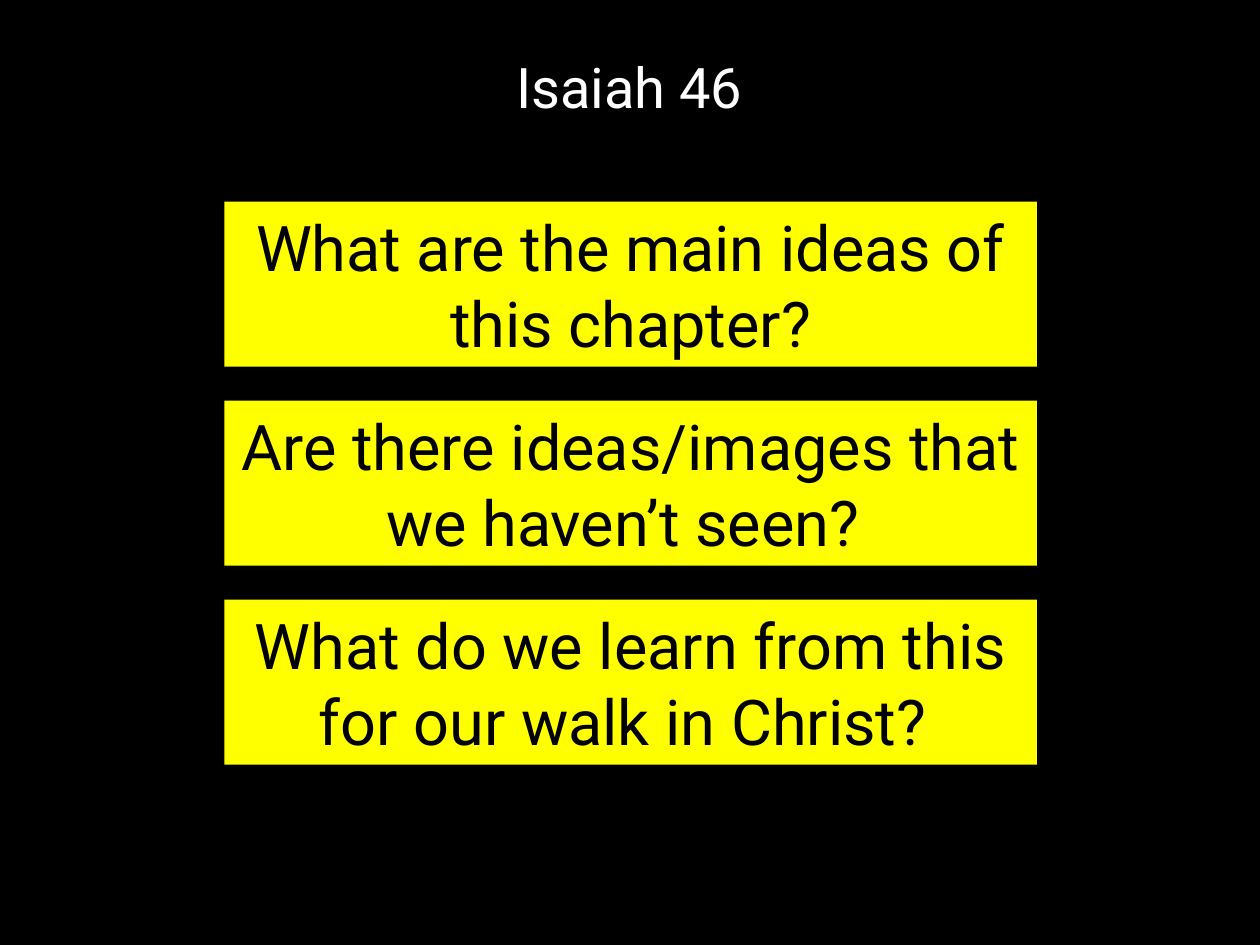
from dataclasses import dataclass

from pptx import Presentation
from pptx.dml.color import RGBColor
from pptx.enum.shapes import MSO_SHAPE
from pptx.enum.text import MSO_ANCHOR, MSO_AUTO_SIZE, PP_ALIGN
from pptx.slide import Slide
from pptx.text.text import TextFrame
from pptx.util import Inches, Pt


@dataclass(frozen=True)
class Theme:
    font: str = "Roboto"
    background: RGBColor = RGBColor(0x00, 0x00, 0x00)
    title: RGBColor = RGBColor(0xFF, 0xFF, 0xFF)
    box: RGBColor = RGBColor(0xFF, 0xFF, 0x00)
    box_text: RGBColor = RGBColor(0x00, 0x00, 0x00)
    title_size: int = 32
    box_size: int = 36


@dataclass(frozen=True)
class Question:
    text: str
    top: float


THEME = Theme()
BOX_LEFT, BOX_WIDTH, BOX_HEIGHT = 1.78, 6.45, 1.31
FIRST_TOP, STEP = 1.6, 1.58
# The closing spaces of the last two questions shift their centred lines
TEXTS = (
    "What are the main ideas of this chapter?",
    "Are there ideas/images that we haven’t seen? ",
    "What do we learn from this for our walk in Christ? ",
)
QUESTIONS = [Question(text, FIRST_TOP + i * STEP) for i, text in enumerate(TEXTS)]


def set_text(tf: TextFrame, text: str, *, size: int, color: RGBColor,
             line_spacing: float = 1.0,
             auto_size: MSO_AUTO_SIZE = MSO_AUTO_SIZE.NONE) -> None:
    """Fill a text frame with one centred, formatted paragraph."""
    tf.word_wrap = True
    tf.auto_size = auto_size
    tf.vertical_anchor = MSO_ANCHOR.MIDDLE
    p = tf.paragraphs[0]
    p.alignment = PP_ALIGN.CENTER
    p.line_spacing = line_spacing
    r = p.add_run()
    r.text = text
    r.font.name = THEME.font
    r.font.size = Pt(size)
    r.font.color.rgb = color


def add_question(s: Slide, question: Question) -> None:
    """Draw one question in its box."""
    sp = s.shapes.add_shape(MSO_SHAPE.RECTANGLE, Inches(BOX_LEFT), Inches(question.top),
                            Inches(BOX_WIDTH), Inches(BOX_HEIGHT))
    sp.shadow.inherit = False
    sp.fill.solid()
    sp.fill.fore_color.rgb = THEME.box
    sp.line.fill.background()
    set_text(sp.text_frame, question.text, size=THEME.box_size, color=THEME.box_text,
             auto_size=MSO_AUTO_SIZE.SHAPE_TO_FIT_TEXT)


def main() -> None:
    prs = Presentation()
    prs.slide_width, prs.slide_height = Inches(10), Inches(7.5)
    s = prs.slides.add_slide(prs.slide_layouts[5])

    # Background
    s.background.fill.solid()
    s.background.fill.fore_color.rgb = THEME.background

    # Title
    title = s.shapes.title
    title.left, title.top = Inches(0.53), Inches(0.4)
    title.width, title.height = Inches(8.93), Inches(0.63)
    set_text(title.text_frame, "Isaiah 46", size=THEME.title_size,
             color=THEME.title, line_spacing=0.9)

    # Discussion questions
    for question in QUESTIONS:
        add_question(s, question)

    prs.save("out.pptx")


if __name__ == "__main__":
    main()
